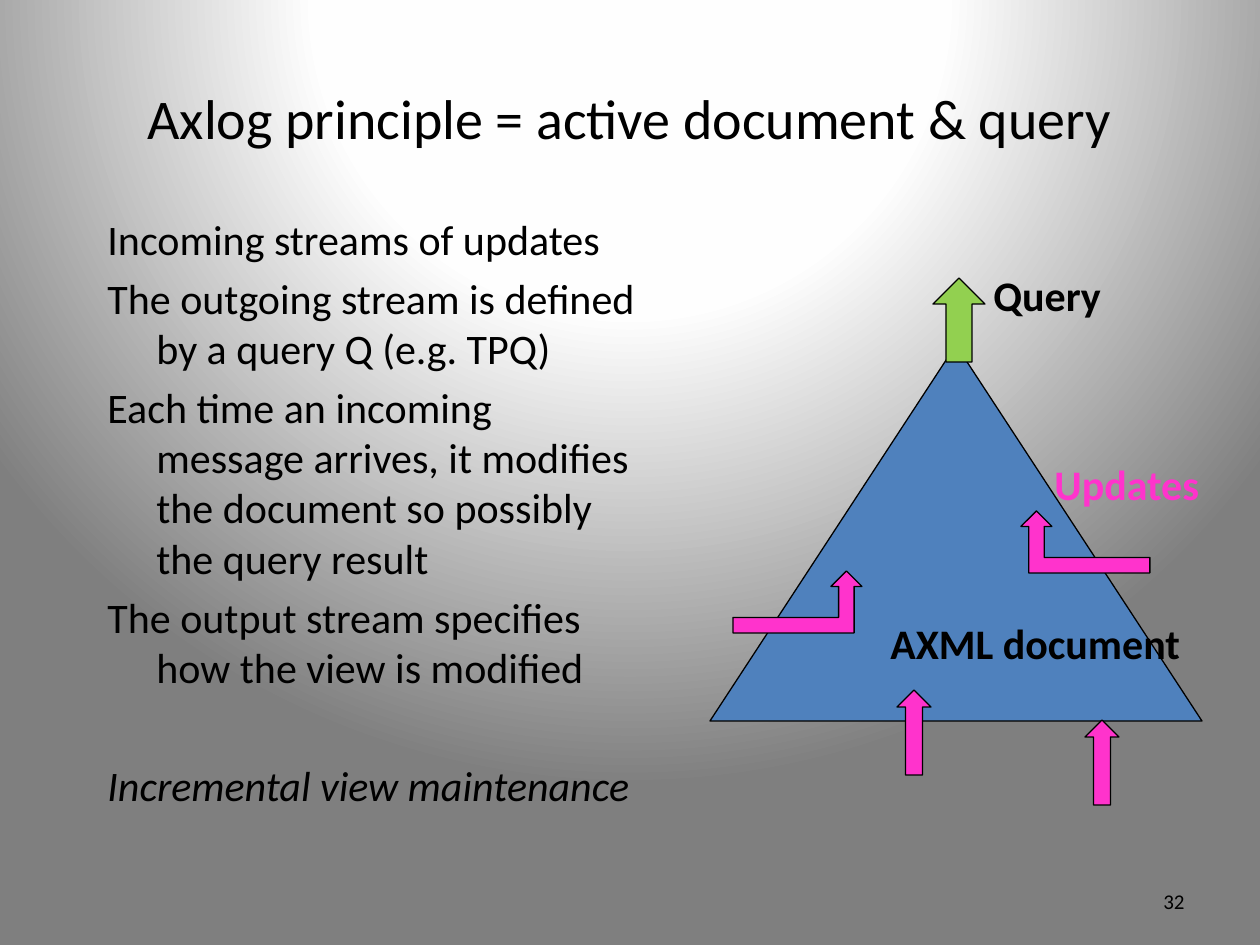
import pptx
import pptx.util
import pptx.oxml
import pptx.oxml.ns
from pptx.dml.color import RGBColor
from pptx.enum.shapes import MSO_SHAPE
from pptx.enum.text import MSO_ANCHOR, PP_ALIGN

PX = 914400 / 126
BLACK, PINK, GREEN, BLUE = "000000", "FF33CC", "92D050", "4F81BD"


def add_text(box, lines, size, color=BLACK, bold=None, align=PP_ALIGN.LEFT,
             anchor=MSO_ANCHOR.TOP, wrap=True):
    """Add a text box with one paragraph per line and return its paragraphs."""
    frame = slide.shapes.add_textbox(*[round(n * PX) for n in box]).text_frame
    frame.word_wrap = wrap
    frame.vertical_anchor = anchor
    frame.text = "\n".join(lines)
    for paragraph in frame.paragraphs:
        paragraph.alignment = align
        paragraph.font.name = "Calibri"
        paragraph.font.size = pptx.util.Pt(size)
        paragraph.font.bold = bold
        paragraph.font.color.rgb = RGBColor.from_string(color)
    return frame.paragraphs


presentation = pptx.Presentation()
presentation.slide_width = round(1260 * PX)
presentation.slide_height = round(945 * PX)
slide = presentation.slides.add_slide(presentation.slide_layouts[6])

# Background: radial gradient centred above the slide
stops = "".join(
    f'<a:gs pos="{percent * 1000}"><a:srgbClr val="{color}"/></a:gs>'
    for percent, color in [(0, "FFFFFF"), (40, "FEFEFE"), (100, "7F7F7F")])
background = pptx.oxml.parse_xml(
    f'<p:bg {pptx.oxml.ns.nsdecls("p", "a")}><p:bgPr>'
    f'<a:gradFill rotWithShape="1"><a:gsLst>{stops}</a:gsLst><a:path path="circle">'
    '<a:fillToRect l="50000" t="-80000" r="50000" b="180000"/></a:path></a:gradFill>'
    '<a:effectLst/></p:bgPr></p:bg>')
slide.element.cSld.insert(0, background)

# Title and body
add_text((63, 38, 1134, 158), ["Axlog principle = active document & query"], 32,
         align=PP_ALIGN.CENTER, anchor=MSO_ANCHOR.MIDDLE)

body = add_text((95, 207, 562, 622), [
    "Incoming streams of updates",
    "The outgoing stream is defined by a query Q (e.g. TPQ)",
    "Each time an incoming message arrives, it modifies the document so possibly "
    "the query result",
    "The output stream specifies how the view is modified",
    "Incremental view maintenance",
], 24)
for paragraph in body:
    paragraph.space_before = pptx.util.Pt(4.8)
    properties = paragraph._p.get_or_add_pPr()
    properties.set("marL", str(round(49 * PX)))
    properties.set("indent", str(round(-49 * PX)))
body[-1].space_before = pptx.util.Pt(38.5)
body[-1].font.italic = True

# Document triangle with its query and update arrows
diagram = [
    (MSO_SHAPE.ISOSCELES_TRIANGLE, (710, 345, 492, 376), BLUE, False),
    (MSO_SHAPE.UP_ARROW, (933, 278, 52, 84), GREEN, False),
    (MSO_SHAPE.UP_ARROW, (897, 690, 34, 85), PINK, False),
    (MSO_SHAPE.UP_ARROW, (1085, 720, 34, 85), PINK, False),
    (MSO_SHAPE.BENT_UP_ARROW, (733, 571, 129, 62), PINK, False),
    (MSO_SHAPE.BENT_UP_ARROW, (1021, 511, 129, 62), PINK, True),
]
for kind, box, color, flipped in diagram:
    shape = slide.shapes.add_shape(kind, *[round(n * PX) for n in box])
    shape.shadow.inherit = False
    shape.fill.solid()
    shape.fill.fore_color.rgb = RGBColor.from_string(color)
    shape.line.color.rgb = RGBColor.from_string(BLACK)
    shape.line.width = pptx.util.Pt(0.75)
    if flipped:
        shape.element.spPr.xfrm.set("flipH", "1")

# Labels and slide number
add_text((981, 263, 134, 63), ["Query"], 24, bold=True, wrap=False)
add_text((878, 611, 328, 115), ["AXML document"], 24, bold=True)
add_text((1042, 452, 173, 63), ["Updates"], 24, PINK, bold=True, wrap=False)
add_text((903, 876, 294, 50), ["32"], 12, align=PP_ALIGN.RIGHT, anchor=MSO_ANCHOR.MIDDLE)

presentation.save("out.pptx")
